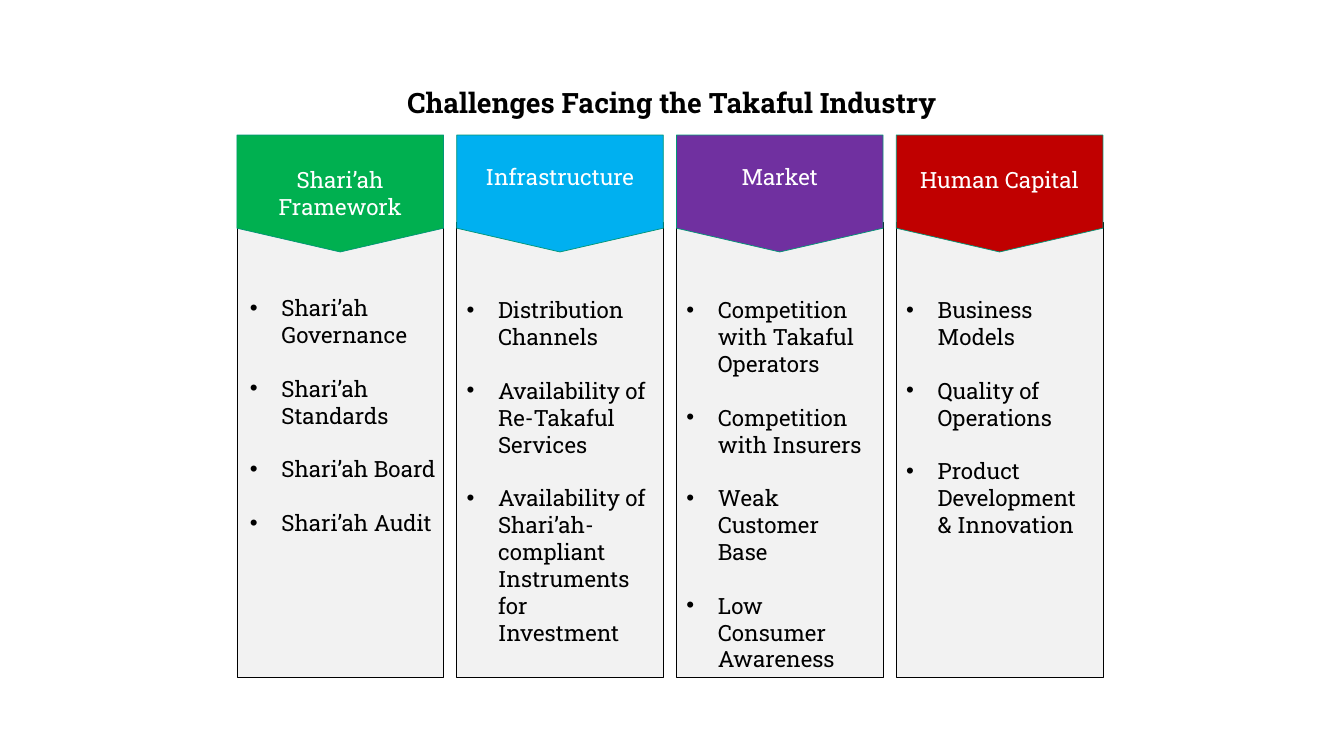
from dataclasses import dataclass

from lxml import etree
from pptx import Presentation
from pptx.dml.color import RGBColor
from pptx.enum import shapes, text
from pptx.oxml import ns
from pptx.util import Pt

FONT = "Roboto Slab"
COLOURS = {
    "black": "000000",
    "white": "FFFFFF",
    "panel": "F2F2F2",
    "edge": "029676",
    "green": "00B050",
    "blue": "00B0F0",
    "purple": "7030A0",
    "red": "C00000",
}
FIRST_LEFT, PITCH, WIDTH = 169.2, 157, 147.6
HEADING_WIDTH = 156.2
INDENT = 22.5
ITEM_GAP = 19.2


@dataclass
class Challenge:
    heading: str
    colour: str
    items: list[str]
    heading_top: float = 113
    items_top: float = 208.1
    items_shift: float = 0


CHALLENGES = [
    Challenge("Shari’ah Framework", "green",
              ["Shari’ah Governance", "Shari’ah Standards", "Shari’ah Board", "Shari’ah Audit"],
              heading_top=115.2, items_top=206.6, items_shift=2.2),
    Challenge("Infrastructure", "blue",
              ["Distribution Channels", "Availability of Re-Takaful Services",
               "Availability of Shari’ah-compliant Instruments for Investment"]),
    Challenge("Market", "purple",
              ["Competition with Takaful Operators", "Competition with Insurers",
               "Weak Customer Base", "Low Consumer Awareness"]),
    Challenge("Human Capital", "red",
              ["Business Models", "Quality of Operations", "Product Development & Innovation"],
              heading_top=115.2),
]


def colour(name: str) -> RGBColor:
    return RGBColor.from_string(COLOURS[name])


def add_bullet(para) -> None:
    props = para._p.get_or_add_pPr()
    props.set("marL", str(Pt(INDENT)))
    props.set("indent", str(-Pt(INDENT)))
    etree.SubElement(props, ns.qn("a:buFont"), typeface="Arial")
    etree.SubElement(props, ns.qn("a:buChar"), char="•")


def write(box, lines: list[str], *, size: float = 16, ink: str = "black",
          bold: bool = False, centred: bool = False, bullets: bool = False) -> None:
    frame = box.text_frame
    frame.word_wrap = True
    frame.auto_size = text.MSO_AUTO_SIZE.NONE
    frame.vertical_anchor = text.MSO_ANCHOR.TOP
    for index, line in enumerate(lines):
        para = frame.add_paragraph() if index else frame.paragraphs[0]
        para.alignment = text.PP_ALIGN.CENTER if centred else text.PP_ALIGN.LEFT
        if index:
            para.space_before = Pt(ITEM_GAP)
        if bullets:
            add_bullet(para)
        span = para.add_run()
        span.text = line
        span.font.name = FONT
        span.font.size = Pt(size)
        span.font.bold = bold
        span.font.color.rgb = colour(ink)


def add_panel(page, kind, left: float, top: float, height: float, fill: str, line: str):
    panel = page.shapes.add_shape(kind, Pt(left), Pt(top), Pt(WIDTH), Pt(height))
    panel.shadow.inherit = False
    panel.fill.solid()
    panel.fill.fore_color.rgb = colour(fill)
    panel.line.color.rgb = colour(line)
    panel.line.width = Pt(0.5)
    return panel


def draw_challenge(page, challenge: Challenge, left: float) -> None:
    add_panel(page, shapes.MSO_SHAPE.RECTANGLE, left, 159.1, 324.7, "panel", "black")
    banner = add_panel(page, shapes.MSO_SHAPE.DOWN_ARROW, left, 96.5, 83.5,
                       challenge.colour, "edge")
    banner.adjustments[0] = 1
    banner.adjustments[1] = 0.203

    heading_left = left - (HEADING_WIDTH - WIDTH) / 2
    heading = page.shapes.add_textbox(Pt(heading_left), Pt(challenge.heading_top),
                                      Pt(HEADING_WIDTH), Pt(46))
    write(heading, [challenge.heading], ink="white", centred=True)

    items = page.shapes.add_textbox(Pt(left + challenge.items_shift), Pt(challenge.items_top),
                                    Pt(WIDTH), Pt(259))
    write(items, challenge.items, bullets=True)


def main() -> None:
    deck = Presentation()
    deck.slide_width, deck.slide_height = Pt(960), Pt(540)
    page = deck.slides.add_slide(deck.slide_layouts[5])
    title = page.shapes.title
    title.left, title.top, title.width, title.height = Pt(0), Pt(57.6), Pt(960), Pt(31.5)
    write(title, ["Challenges Facing the Takaful Industry"], size=20, bold=True, centred=True)
    for index, challenge in enumerate(CHALLENGES):
        draw_challenge(page, challenge, FIRST_LEFT + index * PITCH)
    deck.save("out.pptx")


if __name__ == "__main__":
    main()
